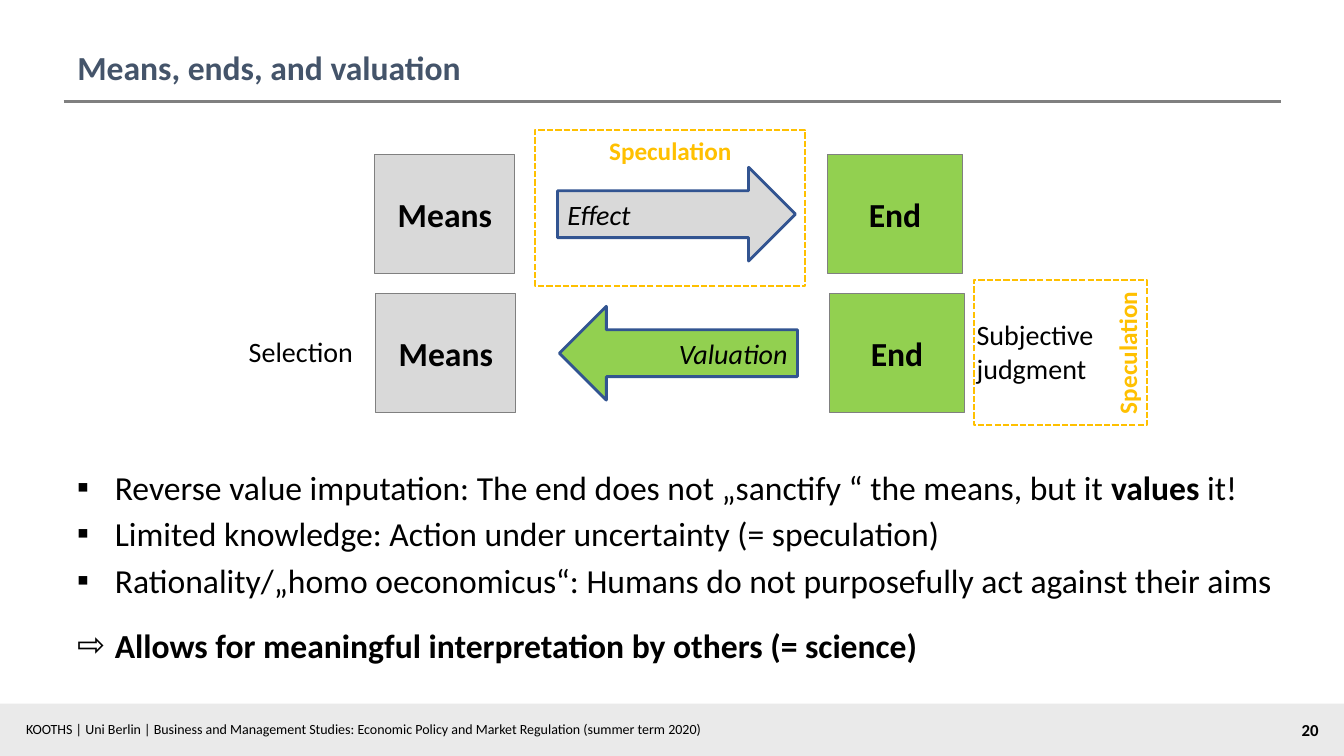
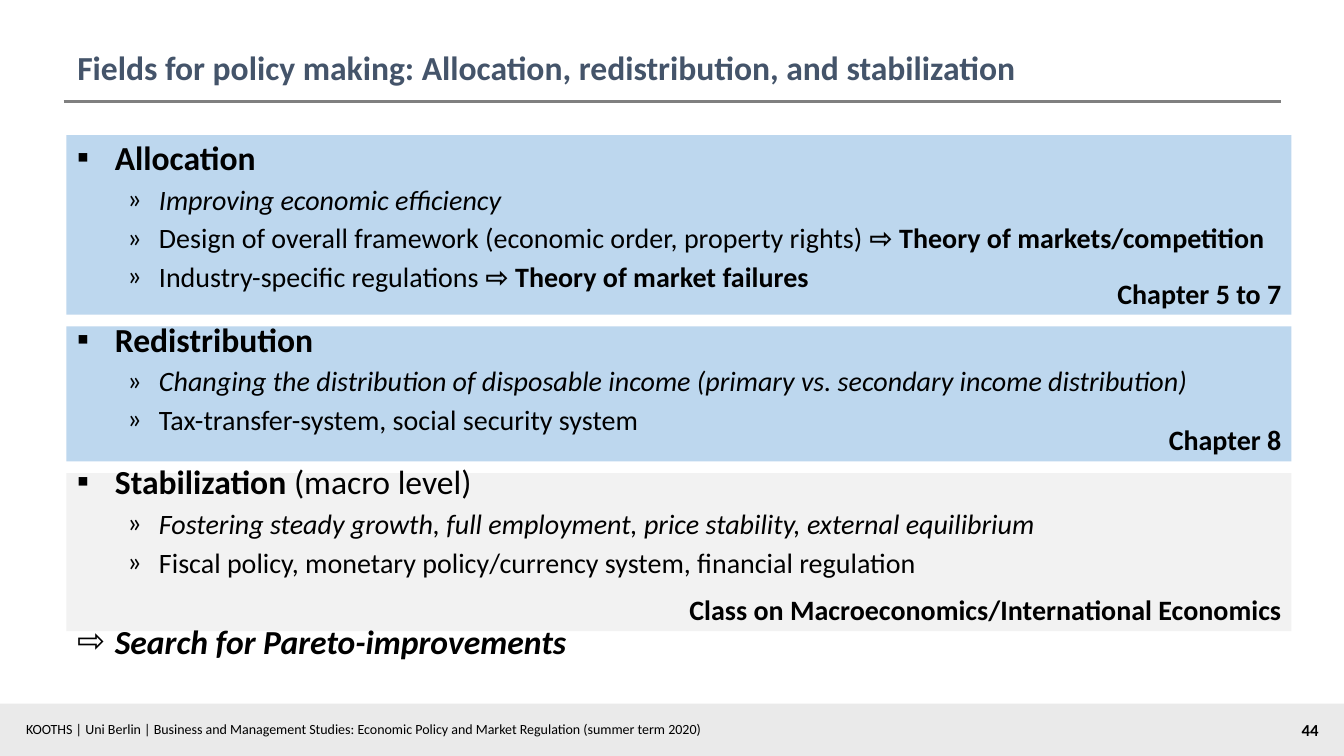
from pptx import Presentation
from pptx.util import Pt
from pptx.dml.color import RGBColor as RGB
from pptx.enum.dml import MSO_LINE
from pptx.enum.shapes import MSO_CONNECTOR, MSO_SHAPE as SHAPE
from pptx.enum.text import MSO_ANCHOR as ANCHOR, MSO_AUTO_SIZE, PP_ALIGN as ALIGN
from pptx.oxml.ns import qn
from lxml.etree import SubElement

COLORS = {
    "text": "000000", "title": "44546A", "band": "EAEAEA", "rule": "808080",
    "means": "D9D9D9", "end": "92D050", "arrow": "325491", "speculation": "FFC000",
    "covered": "BDD7EE", "other": "F2F2F2",
}
FONT = "Calibri"
FOOTER = ("KOOTHS | Uni Berlin | Business and Management Studies: "
          "Economic Policy and Market Regulation (summer term 2020)")
LEVELS = {
    0: {"size": 24, "left": 27, "hang": 27},
    1: {"size": 20, "left": 58.5, "hang": 22.5},
}


def color(name):
    return RGB.from_string(COLORS[name])


def apply(target, values):
    for name, value in values.items():
        setattr(target, name, value)


class Deck:
    def __init__(self):
        self.prs = Presentation()
        apply(self.prs, {"slide_width": Pt(960), "slide_height": Pt(540)})
        self.s = None

    def slide(self, title, number):
        self.s = self.prs.slides.add_slide(self.prs.slide_layouts[5])
        self.shape(SHAPE.RECTANGLE, (0, 502.6, 960, 37.4), fill="band")
        self.text((11.5, 511, 732, 19.4), FOOTER, size=10)
        self.rule(45.4, 915.1, 72.7)
        self.text((798, 510.5, 151, 21.6), number, size=12, flags="b", align=ALIGN.RIGHT)
        sp = self.s.shapes.title
        apply(sp, dict(zip(("left", "top", "width", "height"), map(Pt, (48, 15, 864, 51)))))
        self.fill_text(sp, title, size=24, flags="b", ink="title", anchor=ANCHOR.BOTTOM)

    def rule(self, left, right, y):
        line = self.s.shapes.add_connector(
            MSO_CONNECTOR.STRAIGHT, Pt(left), Pt(y), Pt(right), Pt(y))
        line.line.color.rgb = color("rule")
        line.line.width = Pt(2.25)
        SubElement(line._element.spPr, qn("a:effectLst"))

    def shape(self, kind, box, text="", fill=None, line=None, width=0.75, dash=None, **style):
        sp = self.s.shapes.add_shape(kind, *map(Pt, box))
        sp.shadow.inherit = False
        if fill:
            sp.fill.solid()
            sp.fill.fore_color.rgb = color(fill)
        else:
            sp.fill.background()
        if line:
            sp.line.color.rgb = color(line)
            apply(sp.line, {"width": Pt(width), "dash_style": dash})
        else:
            sp.line.fill.background()
        if text:
            self.fill_text(sp, text, **style)
        return sp

    def text(self, box, text, **style):
        sp = self.s.shapes.add_textbox(*map(Pt, box))
        self.fill_text(sp, text, **style)

    def fill_text(self, sp, text, size=20, flags="", ink="text",
                  align=ALIGN.LEFT, anchor=ANCHOR.TOP):
        tf = sp.text_frame
        apply(tf, {"word_wrap": True, "auto_size": MSO_AUTO_SIZE.NONE, "vertical_anchor": anchor})
        for i, line in enumerate(text.split("\n")):
            p = tf.add_paragraph() if i else tf.paragraphs[0]
            p.alignment = align
            self.run(p, line, size, flags, ink)

    def run(self, p, text, size, flags="", ink="text"):
        r = p.add_run()
        r.text = text
        apply(r.font, {"name": FONT, "size": Pt(size), "bold": "b" in flags, "italic": "i" in flags})
        r.font.color.rgb = color(ink)

    def bullets(self, box, items):
        tf = self.s.shapes.add_textbox(*map(Pt, box)).text_frame
        tf.word_wrap = True
        for i, (char, gap, runs) in enumerate(items):
            p = tf.add_paragraph() if i else tf.paragraphs[0]
            p.level = 1 if char == "»" else 0
            level = LEVELS[p.level]
            p.space_before = Pt(gap or round(level["size"] * 0.18, 1))
            pPr = p._p.get_or_add_pPr()
            pPr.set("marL", str(Pt(level["left"])))
            pPr.set("indent", str(-Pt(level["hang"])))
            SubElement(pPr, qn("a:buFont"), typeface=FONT)
            SubElement(pPr, qn("a:buChar"), char=char)
            for text, flags in runs:
                self.run(p, text, level["size"], flags)


def means_and_ends(d):
    d.slide("Means, ends, and valuation", "20")
    d.bullets((48, 329.8, 880, 152.6), [
        ("▪", 0, [("Reverse value imputation: The end does not „sanctify “ the means, but it ", ""),
                  ("values", "b"), (" it!", "")]),
        ("▪", 0, [("Limited knowledge: Action under uncertainty (= speculation)", "")]),
        ("▪", 0, [("Rationality/„homo oeconomicus“: Humans do not purposefully act against their aims", "")]),
        ("⇨", 18, [("Allows for meaningful interpretation by others (= science)", "b")]),
    ])
    label = {"size": 24, "flags": "b", "align": ALIGN.CENTER, "anchor": ANCHOR.MIDDLE}
    rows = [
        (0, 110.2, SHAPE.RIGHT_ARROW, "Effect", "means", ALIGN.LEFT),
        (1.4, 209.5, SHAPE.LEFT_ARROW, "Valuation", "end", ALIGN.RIGHT),
    ]
    for dx, y, arrow, word, fill, align in rows:
        d.shape(SHAPE.RECTANGLE, (267.8 + dx / 2, y, 100, 85), "Means",
                fill="means", line="rule", **label)
        d.shape(SHAPE.RECTANGLE, (591.1 + dx, y, 96.5, 85), "End",
                fill="end", line="rule", **label)
        d.shape(arrow, (398.2 + dx, y + 9.3, 170, 67), word, fill=fill, line="arrow",
                width=2, flags="i", align=align, anchor=ANCHOR.MIDDLE)
    d.text((170.6, 235.4, 95, 31.7), "Selection")
    d.text((690.5, 223.2, 110, 55.4), "Subjective\njudgment")
    frames = [
        ((382.3, 92.9, 193, 111.6), 0, ANCHOR.TOP),
        ((705.6, 190.1, 103.7, 123.8), 270, ANCHOR.BOTTOM),
    ]
    for box, turn, anchor in frames:
        sp = d.shape(SHAPE.RECTANGLE, box, "Speculation", line="speculation", width=1.5,
                     dash=MSO_LINE.SQUARE_DOT, size=18, flags="b", ink="speculation",
                     align=ALIGN.CENTER, anchor=anchor)
        sp.rotation = turn


def policy_fields(d):
    d.slide("Fields for policy making: Allocation, redistribution, and stabilization", "44")
    y = 96.5
    for height, fill, note in [
        (128.3, "covered", "Chapter 5 to 7"),
        (96.5, "covered", "Chapter 8"),
        (113, "other", "Class on Macroeconomics/International Economics"),
    ]:
        d.shape(SHAPE.RECTANGLE, (47.5, y, 875, height), note, fill=fill, flags="b",
                align=ALIGN.RIGHT, anchor=ANCHOR.BOTTOM)
        y += height + 8.3
    d.bullets((48, 94.3, 880, 388), [
        ("▪", 0, [("Allocation", "b")]),
        ("»", 0, [("Improving economic efficiency", "i")]),
        ("»", 0, [("Design of overall framework (economic order, property rights) ", ""),
                  ("⇨ Theory of markets/competition", "b")]),
        ("»", 0, [("Industry-specific regulations ", ""), ("⇨ Theory of market failures", "b")]),
        ("▪", 18, [("Redistribution", "b")]),
        ("»", 0, [("Changing the distribution of disposable income "
                   "(primary vs. secondary income distribution)", "i")]),
        ("»", 0, [("Tax-transfer-system, social security system", "")]),
        ("▪", 18, [("Stabilization", "b"), (" (macro level)", "")]),
        ("»", 0, [("Fostering steady growth, full employment, price stability, "
                   "external equilibrium", "i")]),
        ("»", 0, [("Fiscal policy, monetary policy/currency system, financial regulation", "")]),
        ("⇨", 30, [("Search for Pareto-improvements", "bi")]),
    ])


def main():
    d = Deck()
    means_and_ends(d)
    policy_fields(d)
    d.prs.save("out.pptx")


if __name__ == "__main__":
    main()
